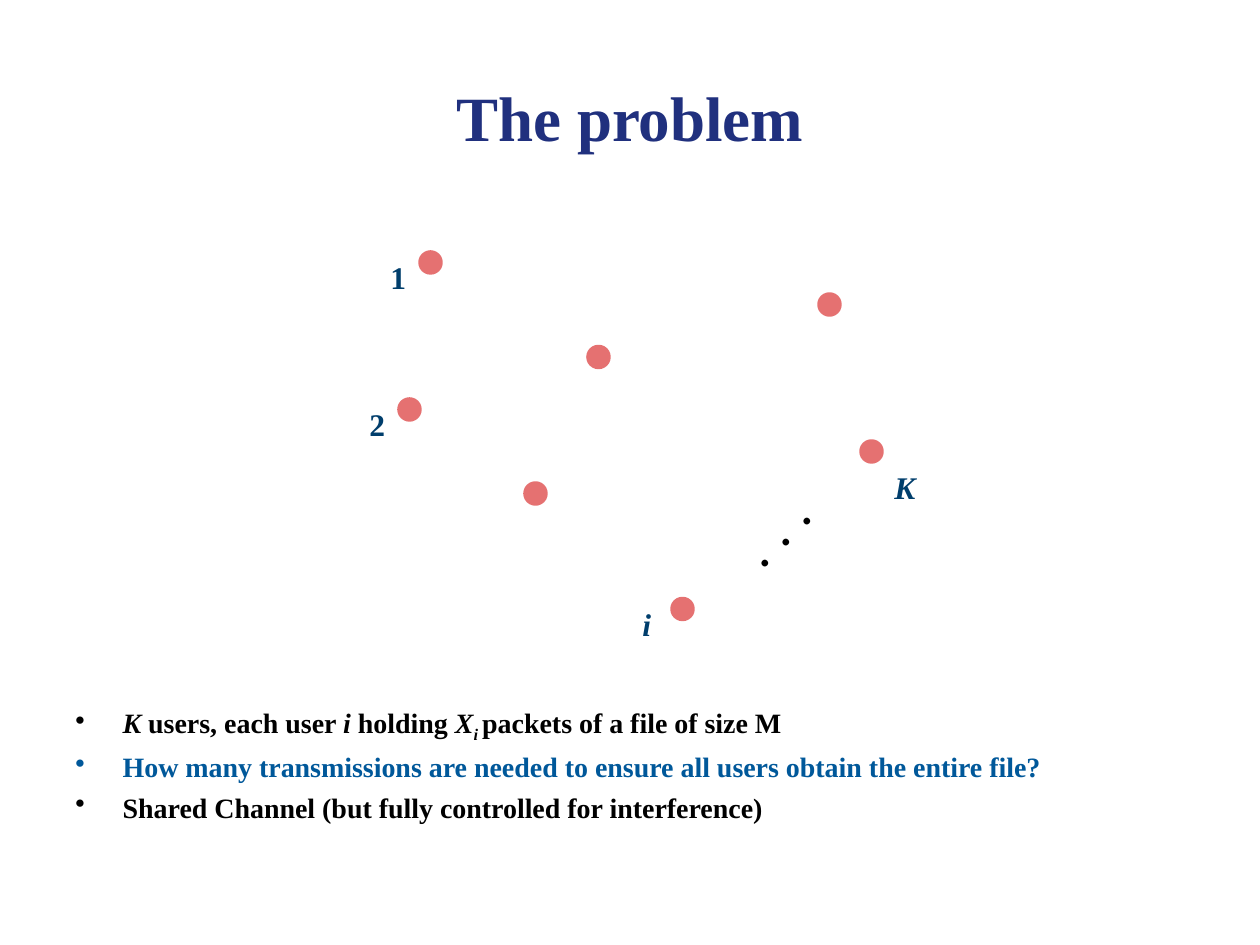
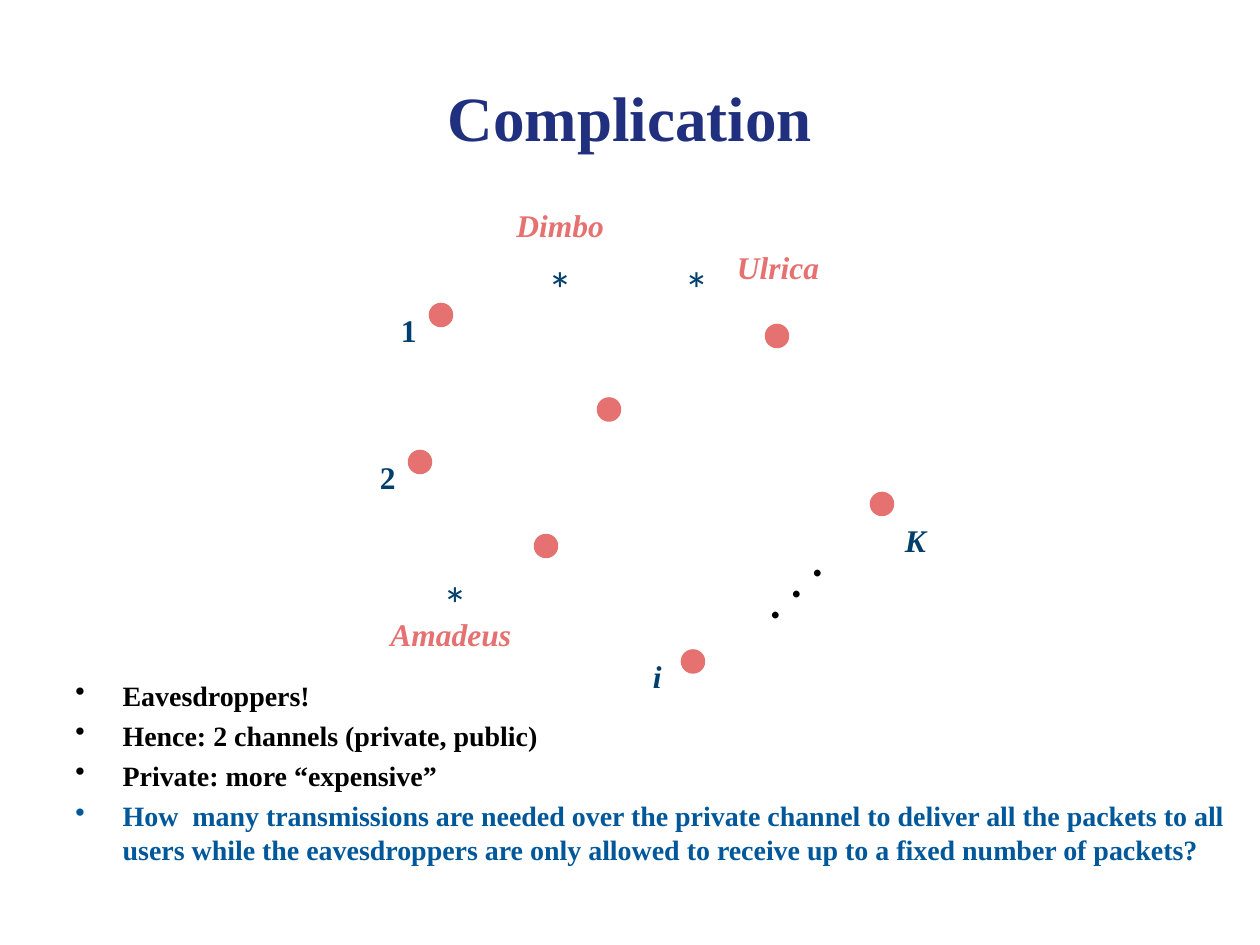
"""Build two slides on sharing packets of a file among users."""
from dataclasses import dataclass

from lxml import etree
from pptx import Presentation
from pptx import util as u
from pptx.dml.color import RGBColor
from pptx.enum import shapes, text
from pptx.oxml import ns


@dataclass(frozen=True)
class Theme:
    """Colours, fonts and type sizes shared by the slides."""
    title: str = "20307E"
    body: str = "000000"
    question: str = "00589A"
    label: str = "003E6C"
    accent: str = "E57171"
    serif: str = "Times New Roman"
    sans: str = "Calibri"
    title_size: float = 36
    body_size: float = 16
    label_size: float = 18
    star_size: float = 28
    ellipsis_size: float = 32


THEME = Theme()


@dataclass(frozen=True)
class Style:
    """Look of one kind of text."""
    size: float
    color: str
    font: str = THEME.serif
    bold: bool = True
    italic: bool = False


TITLE = Style(THEME.title_size, THEME.title)
BODY = Style(THEME.body_size, THEME.body)
QUESTION = Style(THEME.body_size, THEME.question)
NUMBER = Style(THEME.label_size, THEME.label)
VARIABLE = Style(THEME.label_size, THEME.label, italic=True)
NAME = Style(THEME.label_size, THEME.accent, italic=True)
STAR = Style(THEME.star_size, THEME.label, THEME.sans, bold=False)
ELLIPSIS = Style(THEME.ellipsis_size, THEME.body, THEME.sans, bold=False)


@dataclass(frozen=True)
class Box:
    """Place and size in points."""
    left: float
    top: float
    width: float
    height: float

    def lengths(self) -> tuple:
        """Return the four lengths for python-pptx."""
        return u.Pt(self.left), u.Pt(self.top), u.Pt(self.width), u.Pt(self.height)

    def moved(self, right: float, down: float) -> "Box":
        """Return the same box at another place."""
        return Box(self.left + right, self.top + down, self.width, self.height)


@dataclass(frozen=True)
class Label:
    """Short text in the diagram."""
    words: str
    box: Box
    style: Style


@dataclass(frozen=True)
class Span:
    """Stretch of text inside a bullet."""
    words: str
    italic: bool = False
    subscript: bool = False


@dataclass(frozen=True)
class Bullet:
    """Bulleted paragraph."""
    spans: tuple[Span, ...]
    style: Style = BODY


TITLE_BOX = Box(36, 21.6, 648, 90)
BULLET_INDENT = 27
BULLET_SPACING = 3.8
USER_SIZE = 12
USERS = ((240, 144), (228, 228), (336, 198), (300, 276), (384, 342), (492, 252))
USER_LABELS = (
    Label("1", Box(216, 144, 24, 28.8), NUMBER),
    Label("2", Box(204, 228, 24, 28.8), NUMBER),
    Label("i", Box(360, 342, 24, 28.8), VARIABLE),
    *(Label(".", Box(426 + 12 * step, 288 - 12 * step, 30, 46), ELLIPSIS)
      for step in range(3)),
    Label("K", Box(504, 264, 24, 28.8), VARIABLE),
)
EAVESDROPPERS = (
    *(Label("*", Box(left, top, 24, 41), STAR)
      for left, top in ((306, 144), (384, 144), (246, 324))),
    Label("Dimbo", Box(288, 114, 72, 28.8), NAME),
    Label("Ulrica", Box(414, 138, 72, 28.8), NAME),
    Label("Amadeus", Box(216, 348, 90, 28.8), NAME),
)
PROBLEM_BULLETS = (
    Bullet((
        Span("K", italic=True), Span(" users, each user "), Span("i", italic=True),
        Span(" holding "), Span("X", italic=True),
        Span("i ", italic=True, subscript=True),
        Span("packets of a file of size M"),
    )),
    Bullet((Span("How many transmissions are needed to ensure all users obtain "
                 "the entire file?"),), QUESTION),
    Bullet((Span("Shared Channel (but fully controlled for interference)"),)),
)
COMPLICATION_BULLETS = (
    Bullet((Span("Eavesdroppers!"),)),
    Bullet((Span("Hence: 2 channels (private, public)"),)),
    Bullet((Span("Private: more “expensive”"),)),
    Bullet((Span("How  many transmissions are needed over the private channel to "
                 "deliver all the packets to all users while the eavesdroppers are "
                 "only allowed to receive up to a fixed number of packets?"),), QUESTION),
)


def style_paragraph(paragraph, style: Style) -> None:
    """Set the font of a whole paragraph."""
    font = paragraph.font
    font.name, font.size = style.font, u.Pt(style.size)
    font.bold, font.italic = style.bold, style.italic
    font.color.rgb = RGBColor.from_string(style.color)


def add_text_frame(slide, box: Box):
    """Add a wrapping text box and return its frame."""
    frame = slide.shapes.add_textbox(*box.lengths()).text_frame
    frame.word_wrap = True
    return frame


def add_title(slide, words: str) -> None:
    """Add the centred slide title."""
    frame = add_text_frame(slide, TITLE_BOX)
    frame.vertical_anchor = text.MSO_ANCHOR.MIDDLE
    paragraph = frame.paragraphs[0]
    paragraph.text = words
    paragraph.alignment = text.PP_ALIGN.CENTER
    style_paragraph(paragraph, TITLE)


def add_label(slide, label: Label) -> None:
    """Add one diagram label."""
    frame = add_text_frame(slide, label.box)
    frame.auto_size = text.MSO_AUTO_SIZE.SHAPE_TO_FIT_TEXT
    frame.paragraphs[0].text = label.words
    style_paragraph(frame.paragraphs[0], label.style)


def add_user(slide, left: float, top: float) -> None:
    """Add the dot that stands for one user."""
    box = Box(left, top, USER_SIZE, USER_SIZE)
    shape = slide.shapes.add_shape(shapes.MSO_SHAPE.OVAL, *box.lengths())
    shape.shadow.inherit = False
    color = RGBColor.from_string(THEME.accent)
    shape.fill.solid()
    shape.fill.fore_color.rgb = color
    shape.line.color.rgb = color
    shape.line.width = u.Pt(2)


def add_network(slide, right: float, down: float, far_user: tuple[float, float]) -> None:
    """Add the users and their labels, moved by an offset, and one far user."""
    for left, top in USERS:
        add_user(slide, left + right, top + down)
    add_user(slide, *far_user)
    for label in USER_LABELS:
        add_label(slide, Label(label.words, label.box.moved(right, down), label.style))


def mark_bullet(paragraph, color: str) -> None:
    """Give a paragraph a hanging bullet in the colour of its text."""
    properties = paragraph._p.get_or_add_pPr()
    properties.set("marL", str(u.Pt(BULLET_INDENT)))
    properties.set("indent", str(-u.Pt(BULLET_INDENT)))
    bullet_color = etree.SubElement(properties, ns.qn("a:buClr"))
    etree.SubElement(bullet_color, ns.qn("a:srgbClr"), val=color)
    etree.SubElement(properties, ns.qn("a:buChar"), char="•")


def add_bullets(slide, box: Box, bullets: tuple[Bullet, ...]) -> None:
    """Add the bulleted list."""
    frame = add_text_frame(slide, box)
    for index, bullet in enumerate(bullets):
        paragraph = frame.add_paragraph() if index else frame.paragraphs[0]
        mark_bullet(paragraph, bullet.style.color)
        paragraph.space_before = u.Pt(BULLET_SPACING)
        style_paragraph(paragraph, bullet.style)
        for span in bullet.spans:
            run = paragraph.add_run()
            run.text = span.words
            if span.italic:
                run.font.italic = True
            if span.subscript:
                run._r.get_or_add_rPr().set("baseline", "-25000")


def add_slide(presentation, title: str):
    """Add a blank slide with a title."""
    slide = presentation.slides.add_slide(presentation.slide_layouts[6])
    add_title(slide, title)
    return slide


def main() -> None:
    """Build and save the presentation."""
    presentation = Presentation()
    presentation.slide_width, presentation.slide_height = u.Pt(720), u.Pt(540)

    problem = add_slide(presentation, "The problem")
    add_bullets(problem, Box(36, 399.4, 648, 98), PROBLEM_BULLETS)
    add_network(problem, 0, 0, far_user=(468, 168))

    complication = add_slide(presentation, "Complication")
    add_bullets(complication, Box(36, 384, 684, 144), COMPLICATION_BULLETS)
    add_network(complication, 6, 30, far_user=(438, 186))
    for label in EAVESDROPPERS:
        add_label(complication, label)

    presentation.save("out.pptx")


if __name__ == "__main__":
    main()
